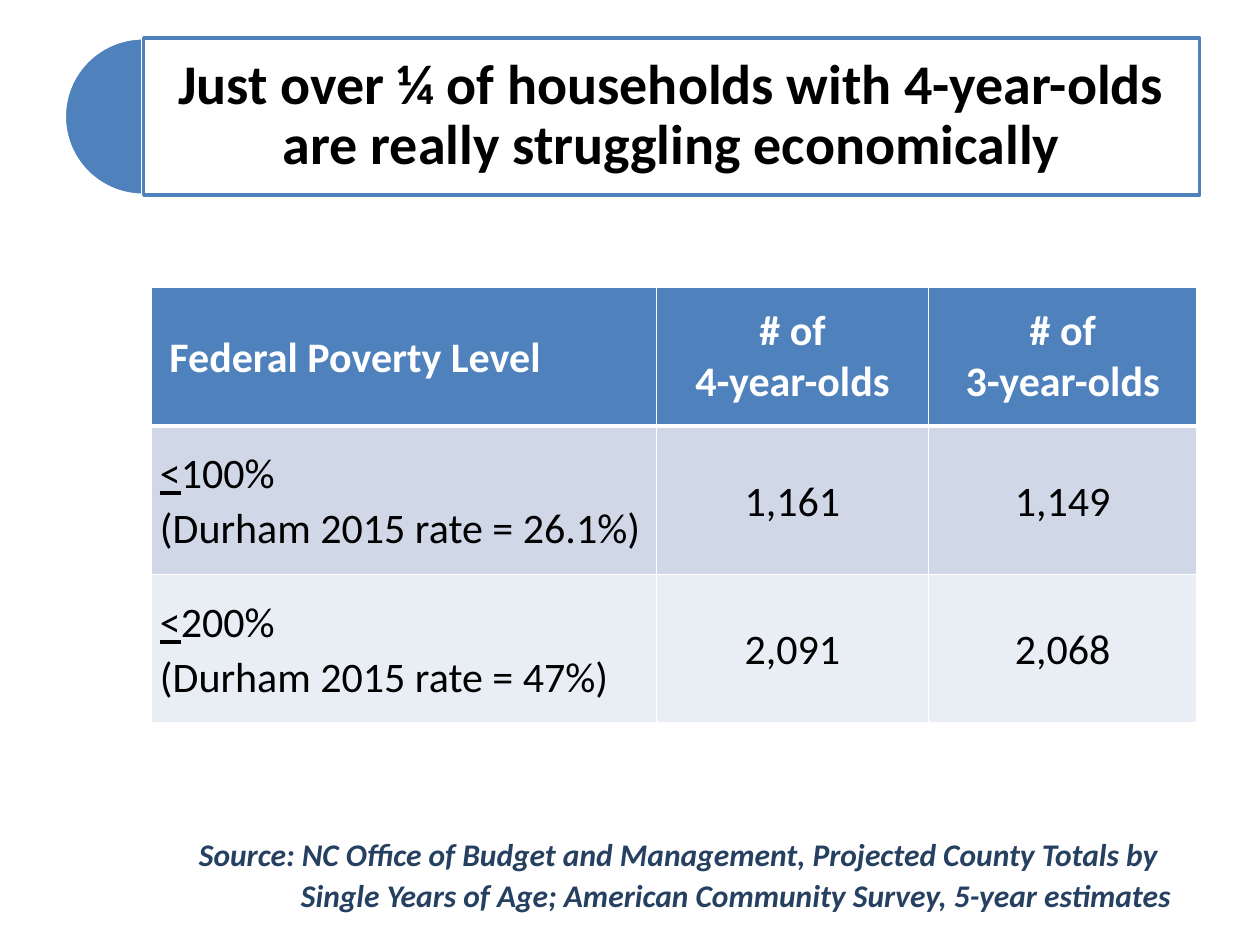
from lxml.etree import SubElement
from pptx import Presentation
from pptx.dml.color import RGBColor
from pptx.enum.shapes import MSO_SHAPE
from pptx.enum.text import MSO_ANCHOR, PP_ALIGN
from pptx.oxml.ns import qn
from pptx.util import Inches, Pt

COLORS = {
    "blue": "4F81BD",
    "navy": "254061",
    "white": "FFFFFF",
    "black": "000000",
    "band_dark": "D0D8E8",
    "band_light": "E9EDF4",
}
HEADERS = ["\N{NO-BREAK SPACE}Federal Poverty Level", "# of\n4-year-olds", "# of\v3-year-olds"]
LEVELS = [
    ("100%", "(Durham 2015 rate = 26.1%)", "1,161", "1,149", "band_dark"),
    ("200%", "(Durham 2015 rate = 47%)", "2,091", "2,068", "band_light"),
]
COLUMN_WIDTHS = [4.01, 2.16, 2.13]
ROW_HEIGHTS = [1.1, 1.18, 1.18]


def rgb(name):
    return RGBColor.from_string(COLORS[name])


def style_font(font, size, color, bold=False, italic=False):
    font.name = "Calibri"
    font.size = Pt(size)
    font.bold = bold
    font.italic = italic
    font.color.rgb = rgb(color)


def add_outlined_shape(group, kind, left, width, fill, line):
    shape = group.shapes.add_shape(kind, Inches(left), Inches(0.3), Inches(width), Inches(1.25))
    shape.shadow.inherit = False
    shape.fill.solid()
    shape.fill.fore_color.rgb = rgb(fill)
    shape.line.color.rgb = rgb(line)
    shape.line.width = Pt(2)
    return shape


def add_title_banner(page, title):
    group = page.shapes.add_group_shape()
    half_disc = add_outlined_shape(group, MSO_SHAPE.PIE, 0.51, 1.25, "blue", "white")
    half_disc.adjustments[0] = 54
    half_disc.adjustments[1] = 162
    banner = add_outlined_shape(group, MSO_SHAPE.RECTANGLE, 1.14, 8.38, "white", "blue")
    frame = banner.text_frame
    frame.word_wrap = True
    frame.vertical_anchor = MSO_ANCHOR.MIDDLE
    frame.margin_left = frame.margin_right = Inches(0.13)
    frame.margin_top = frame.margin_bottom = Inches(0.13)
    para = frame.paragraphs[0]
    para.text = title
    para.alignment = PP_ALIGN.CENTER
    para.line_spacing = 0.9
    style_font(para.font, 32, "black", bold=True)


def add_borders(cell, top, bottom):
    properties = cell._tc.get_or_add_tcPr()
    for side, points in (("L", 1), ("R", 1), ("T", top), ("B", bottom)):
        border = SubElement(properties, qn(f"a:ln{side}"), w=str(Pt(points)))
        fill = SubElement(border, qn("a:solidFill"))
        SubElement(fill, qn("a:srgbClr"), val=COLORS["white"])


def style_cell(cell, fill, color, bold, centered, spacing):
    cell.vertical_anchor = MSO_ANCHOR.MIDDLE
    cell.margin_left = cell.margin_right = Inches(0.07)
    cell.margin_top = cell.margin_bottom = 0
    cell.fill.solid()
    cell.fill.fore_color.rgb = rgb(fill)
    for para in cell.text_frame.paragraphs:
        para.alignment = PP_ALIGN.CENTER if centered else PP_ALIGN.LEFT
        para.line_spacing = spacing
        style_font(para.font, 24, color, bold)


def write_level(cell, percent, rate):
    para = cell.text_frame.paragraphs[0]
    sign = para.add_run()
    sign.text = "<"
    sign.font.underline = True
    para.add_run().text = percent
    para.add_line_break()
    para.add_run().text = rate


def add_poverty_table(page):
    table = page.shapes.add_table(
        len(ROW_HEIGHTS), len(COLUMN_WIDTHS), Inches(1.2), Inches(2.28),
        Inches(sum(COLUMN_WIDTHS)), Inches(sum(ROW_HEIGHTS)),
    ).table
    for column, width in zip(table.columns, COLUMN_WIDTHS):
        column.width = Inches(width)
    for row, height in zip(table.rows, ROW_HEIGHTS):
        row.height = Inches(height)

    for index, header in enumerate(HEADERS):
        cell = table.cell(0, index)
        cell.text = header
        add_borders(cell, top=1, bottom=3)
        style_cell(cell, "blue", "white", True, index > 0, 1.0 if index else 1.07)

    for row_index, (percent, rate, fours, threes, fill) in enumerate(LEVELS, start=1):
        write_level(table.cell(row_index, 0), percent, rate)
        table.cell(row_index, 1).text = fours
        table.cell(row_index, 2).text = threes
        for index, cell in enumerate(table.rows[row_index].cells):
            add_borders(cell, top=3 if row_index == 1 else 1, bottom=1)
            style_cell(cell, fill, "black", False, index > 0, 1.07)


def add_source_note(page, note):
    box = page.shapes.add_textbox(Inches(1.48), Inches(6.56), Inches(8.08), Inches(0.75))
    box.text_frame.word_wrap = True
    para = box.text_frame.paragraphs[0]
    para.text = note
    para.line_spacing = 1.07
    properties = para._p.get_or_add_pPr()
    properties.set("marL", str(Inches(0.81)))
    properties.set("indent", str(Inches(-0.81)))
    style_font(para.font, 18, "navy", bold=True, italic=True)


def main():
    deck = Presentation()
    deck.slide_width = Inches(10)
    deck.slide_height = Inches(7.5)
    page = deck.slides.add_slide(deck.slide_layouts[6])
    add_title_banner(
        page, "Just over ¼ of households with 4-year-olds are really struggling economically"
    )
    add_poverty_table(page)
    add_source_note(
        page,
        "Source: NC Office of Budget and Management, Projected County Totals by "
        "Single Years of Age; American Community Survey, 5-year estimates",
    )
    deck.save("out.pptx")


if __name__ == "__main__":
    main()
